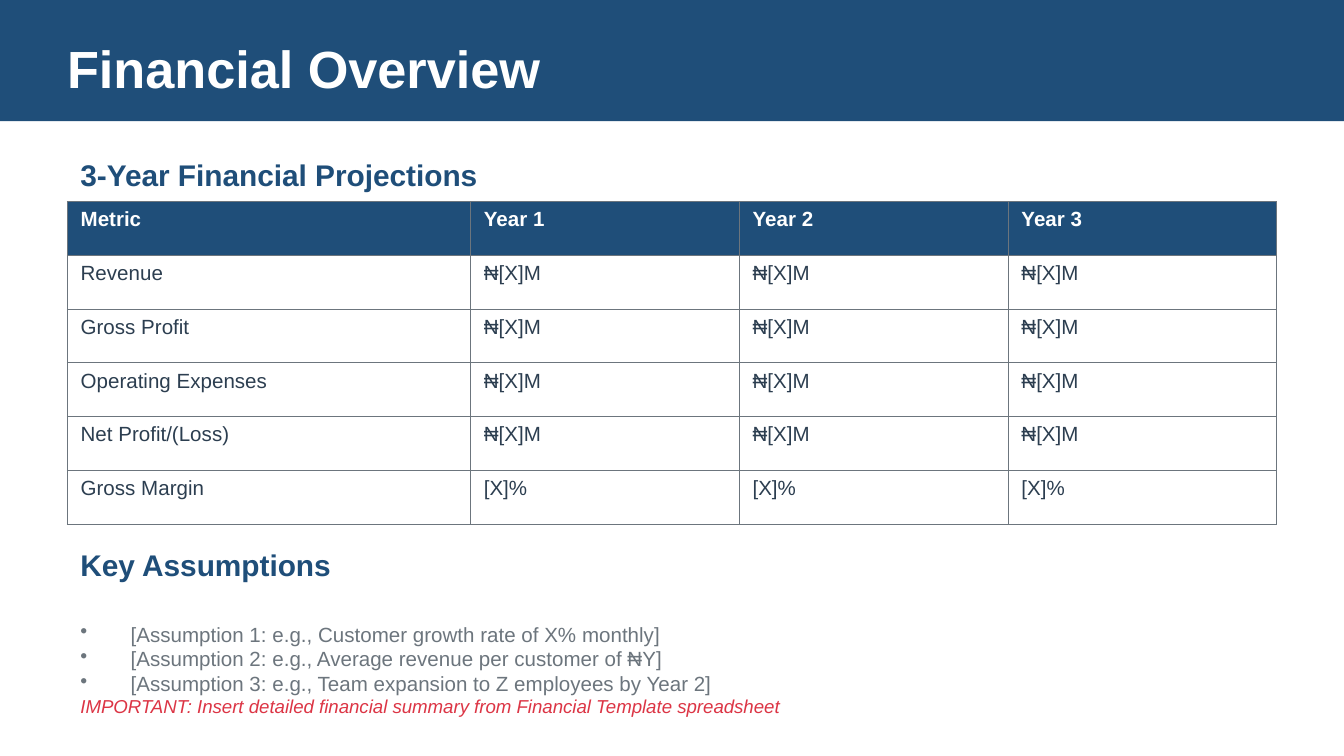
from lxml.etree import SubElement as Sub
from pptx import Presentation
from pptx.dml.color import RGBColor
from pptx.enum.shapes import MSO_SHAPE as Shape
from pptx.enum.text import MSO_ANCHOR as Anchor
from pptx.oxml.ns import qn
from pptx.util import Cm, Pt

NAVY, INK, GREY, RED, WHITE = "1F4E79", "2C3E50", "6C757D", "DC3545", "FFFFFF"
WIDE, HIGH = 25.4, 14.29
EDGE = 1.27
SPAN = WIDE - 2 * EDGE
NAIRA = "₦[X]M"
HEADS = ["Metric", "Year 1", "Year 2", "Year 3"]
ROWS = [[name] + [NAIRA] * 3 for name in
        ("Revenue", "Gross Profit", "Operating Expenses", "Net Profit/(Loss)")]
ROWS.append(["Gross Margin"] + ["[X]%"] * 3)
NOTES = ["[Assumption 1: e.g., Customer growth rate of X% monthly]",
         "[Assumption 2: e.g., Average revenue per customer of ₦Y]",
         "[Assumption 3: e.g., Team expansion to Z employees by Year 2]"]


def rgb(code):
    return RGBColor.from_string(code)


def style(para, size, color, bold=False, italic=False):
    font = para.font
    font.name, font.size = "Arial", Pt(size)
    font.bold, font.italic = bold, italic
    font.color.rgb = rgb(color)


def bullet(para, indent):
    props = para._p.get_or_add_pPr()
    props.set("marL", str(Cm(indent)))
    props.set("indent", str(-Cm(indent)))
    Sub(props, qn("a:buChar"), char="•")


def add_text(slide, box, lines, size, color, bold=False, italic=False,
             pad=True, indent=0):
    frame = slide.shapes.add_textbox(*map(Cm, box)).text_frame
    frame.word_wrap = True
    frame.vertical_anchor = Anchor.MIDDLE
    if not pad:
        frame.margin_left = frame.margin_right = 0
        frame.margin_top = frame.margin_bottom = 0
    frame.text = "\n".join(lines)
    for para in frame.paragraphs:
        if indent:
            bullet(para, indent)
        style(para, size, color, bold, italic)


def add_banner(slide, box, title):
    left, top, width, height = box
    bar = slide.shapes.add_shape(Shape.RECTANGLE, *map(Cm, box))
    bar.shadow.inherit = False
    bar.fill.solid()
    bar.fill.fore_color.rgb = rgb(NAVY)
    bar.line.fill.background()
    inner = (left + EDGE, top + 0.64, width - 2 * EDGE, 1.27)
    add_text(slide, inner, [title], 28, WHITE, bold=True, pad=False)


def add_border(cell):
    props = cell._tc.get_or_add_tcPr()
    for side in "LRTB":
        line = Sub(props, qn("a:ln" + side), w=str(Pt(0.5)))
        fill = Sub(line, qn("a:solidFill"))
        Sub(fill, qn("a:srgbClr"), val=GREY)


def add_grid(slide, box, rows, parts):
    """Draw rows under a heading row; parts are the relative column widths."""
    table = slide.shapes.add_table(len(rows), len(parts), *map(Cm, box)).table
    for col, part in zip(table.columns, parts):
        col.width = Cm(box[2] * part / sum(parts))
    for r, row in enumerate(rows):
        for c, text in enumerate(row):
            cell = table.cell(r, c)
            cell.text = text
            add_border(cell)
            cell.fill.solid()
            cell.fill.fore_color.rgb = rgb(WHITE if r else NAVY)
            style(cell.text_frame.paragraphs[0], 11,
                  INK if r else WHITE, bold=r == 0)


def add_plan(slide, box):
    """Place the heading and table of projections."""
    left, top, width, height = box
    head = 1.02
    add_text(slide, (left, top, width, head), ["3-Year Financial Projections"],
             16, NAVY, bold=True)
    add_grid(slide, (left, top + head, width, height - head),
             [HEADS] + ROWS, [3, 2, 2, 2])


def add_basis(slide, box):
    """Place the assumptions with the reminder along the bottom."""
    left, top, width, height = box
    head, foot = 1.02, 0.76
    add_text(slide, (left, top, width, head), ["Key Assumptions"],
             16, NAVY, bold=True)
    add_text(slide, (left, top + head, width, height - head), NOTES,
             11, GREY, indent=0.95)
    add_text(slide, (left, top + height - foot, width, foot),
             ["IMPORTANT: Insert detailed financial summary from "
              "Financial Template spreadsheet"], 10, RED, italic=True)


def main():
    deck = Presentation()
    deck.slide_width, deck.slide_height = Cm(WIDE), Cm(HIGH)
    slide = deck.slides.add_slide(deck.slide_layouts[6])
    add_banner(slide, (0, 0, WIDE, 2.29), "Financial Overview")
    add_plan(slide, (EDGE, 2.79, SPAN, 7.12))
    add_basis(slide, (EDGE, 10.16, SPAN, 3.56))
    deck.save("out.pptx")


if __name__ == "__main__":
    main()
